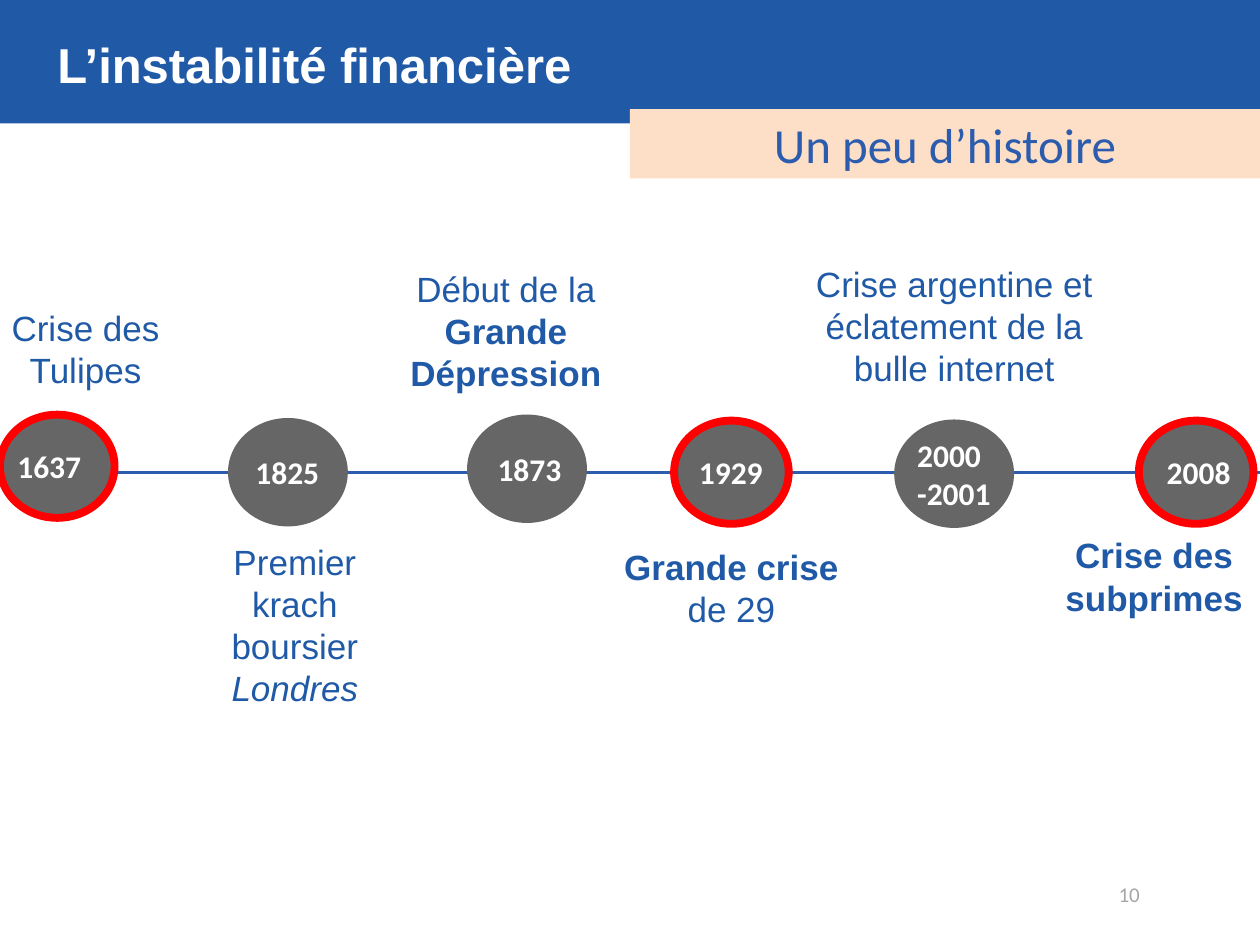
import pptx
import pptx.dml.color
import pptx.enum.shapes
import pptx.enum.text
import pptx.oxml.ns
import pptx.util
import lxml.etree

Cm = pptx.util.Cm
Pt = pptx.util.Pt
SHAPE = pptx.enum.shapes.MSO_SHAPE
ANCHOR = pptx.enum.text.MSO_ANCHOR
ALIGN = pptx.enum.text.PP_ALIGN

COLORS = {
    "blue": "205AA7",
    "axis": "2B5CAD",
    "peach": "FDDFC7",
    "grey": "666666",
    "red": "FF0000",
    "white": "FFFFFF",
    "number": "A6A6A6",
}
FORMATS = {
    "title": {"name": "Arial", "size": Pt(28), "bold": True, "color": "white"},
    "subtitle": {"name": "Calibri", "size": Pt(28), "color": "axis"},
    "year": {"name": "Calibri", "size": Pt(18), "bold": True, "color": "white"},
    "caption": {"name": "Arial", "size": Pt(20), "color": "blue"},
    "number": {"name": "Calibri", "size": Pt(12), "color": "number"},
}
BOLD = {"bold": True}
ITALIC = {"italic": True}
DISC_W, DISC_H = 2.31, 2.08

# disc (left, top), ring colour, year, year box (left, drop, width, height),
# caption box, caption runs
EVENTS = [
    ((0, 8.36), "red", "1637", (0.1, 0.53, 2.74, 1.02),
     (-0.69, 6.05, 4.83, 1.96), [("Crise des Tulipes", {})]),
    ((4.65, 8.48), "grey", "1825", (4.9, 0.53, 2.11, 1.02),
     (3.53, 10.77, 4.83, 3.68),
     [("Premier krach boursier ", {}), ("Londres", ITALIC)]),
    ((9.47, 8.41), "grey", "1873", (9.78, 0.53, 2.08, 1.02),
     (7.57, 5.26, 5.26, 2.82),
     [("Début de la ", {}), ("Grande Dépression", BOLD)]),
    ((13.59, 8.48), "red", "1929", (13.84, 0.53, 2.13, 1.02),
     (12.27, 10.87, 4.95, 1.96), [("Grande crise ", BOLD), ("de 29", {})]),
    ((18.08, 8.51), "grey", "2000 -2001", (18.24, 0.15, 2.01, 1.8),
     (16.18, 5.16, 6.12, 2.82),
     [("Crise argentine et éclatement de la bulle internet", {})]),
    ((22.96, 8.48), "red", "2008", (23.27, 0.53, 2.01, 1.02),
     (20.85, 10.64, 4.83, 1.96), [("Crise des subprimes", BOLD)]),
]


def rgb(color):
    return pptx.dml.color.RGBColor.from_string(COLORS[color])


class Deck:
    """Holds the presentation, the current slide and the text styles."""

    def __init__(self, width, height):
        self.prs = pptx.Presentation()
        self.prs.slide_width, self.prs.slide_height = Cm(width), Cm(height)
        self.slide = self.prs.slides.add_slide(self.prs.slide_layouts[6])

    def add_runs(self, sp, runs, style, align=ALIGN.LEFT, anchor=ANCHOR.TOP):
        """Fill sp with one paragraph of (text, format changes) runs."""
        tf = sp.text_frame
        tf.word_wrap = True
        tf.vertical_anchor = anchor
        p = tf.paragraphs[0]
        p.alignment = align
        for text, changes in runs:
            r = p.add_run()
            r.text = text
            for key, value in {**FORMATS[style], **changes}.items():
                if key == "color":
                    r.font.color.rgb = rgb(value)
                else:
                    setattr(r.font, key, value)

    def text(self, box, runs, style, **layout):
        sp = self.slide.shapes.add_textbox(*map(Cm, box))
        self.add_runs(sp, runs, style, **layout)

    def shape(self, kind, box, fill, line=None, width=0):
        sp = self.slide.shapes.add_shape(kind, *map(Cm, box))
        sp.shadow.inherit = False
        sp.fill.solid()
        sp.fill.fore_color.rgb = rgb(fill)
        if line:
            sp.line.color.rgb = rgb(line)
            sp.line.width = Pt(width)
        else:
            sp.line.fill.background()
        return sp

    def line(self, ends, color, width):
        straight = pptx.enum.shapes.MSO_CONNECTOR.STRAIGHT
        sp = self.slide.shapes.add_connector(straight, *map(Cm, ends))
        sp.line.color.rgb = rgb(color)
        sp.line.width = Pt(width)
        sp_pr = sp._element.spPr
        lxml.etree.SubElement(sp_pr, pptx.oxml.ns.qn("a:effectLst"))

    def event(self, disc, ring, year, year_box, caption_box, caption):
        left, top = disc
        self.shape(SHAPE.FLOWCHART_CONNECTOR, (left, top, DISC_W, DISC_H),
                   "grey", ring, 4.5 if ring == "red" else 3)
        year_left, drop, width, height = year_box
        self.text((year_left, top + drop, width, height), [(year, {})], "year")
        self.text(caption_box, caption, "caption", align=ALIGN.CENTER)


def main():
    deck = Deck(25.4, 19.05)
    deck.shape(SHAPE.RECTANGLE, (0, 0, 25.4, 2.49), "blue")
    deck.text((0.91, -0.3, 22.86, 3.18), [("L’instabilité financière", {})],
              "title", anchor=ANCHOR.MIDDLE)
    banner = deck.shape(SHAPE.RECTANGLE, (12.7, 2.2, 12.7, 1.4), "peach")
    deck.add_runs(banner, [("Un peu d’histoire", {})], "subtitle",
                  align=ALIGN.CENTER, anchor=ANCHOR.MIDDLE)
    deck.line((0, 9.52, 25.4, 9.52), "axis", 1.5)
    for event in EVENTS:
        deck.event(*event)
    deck.text((22.3, 17.65, 1.37, 1.02), [("10", {})], "number")
    deck.prs.save("out.pptx")


if __name__ == "__main__":
    main()
